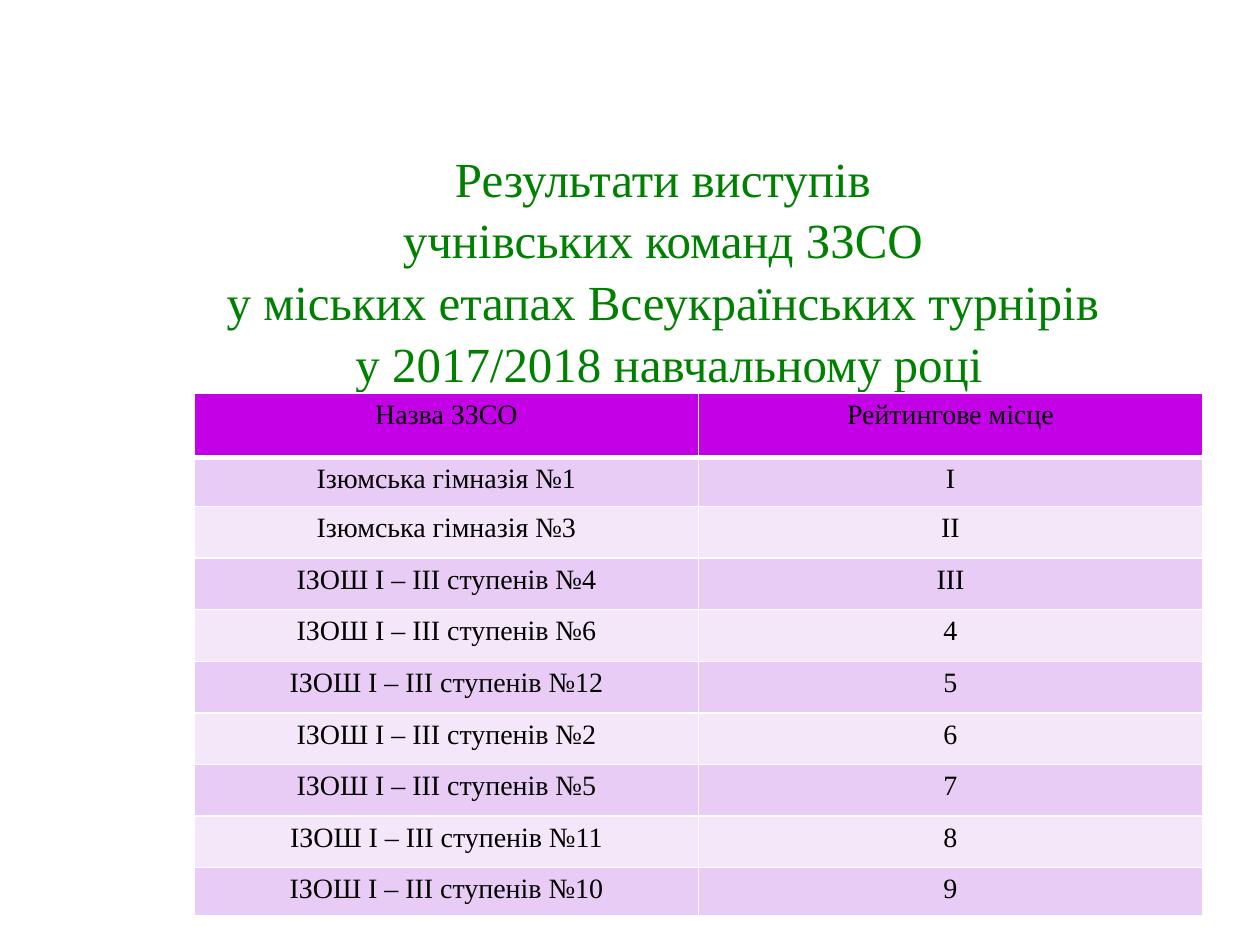
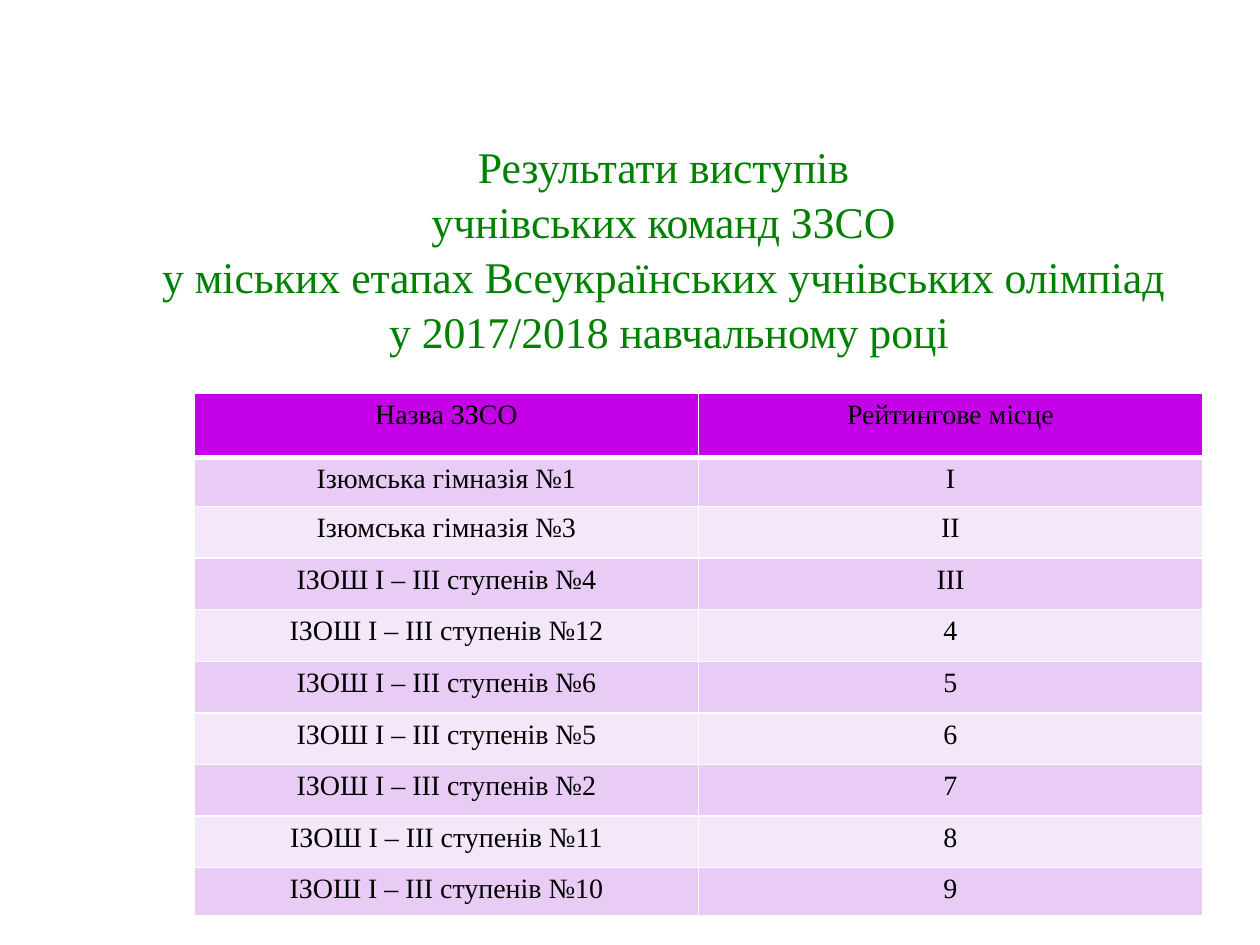
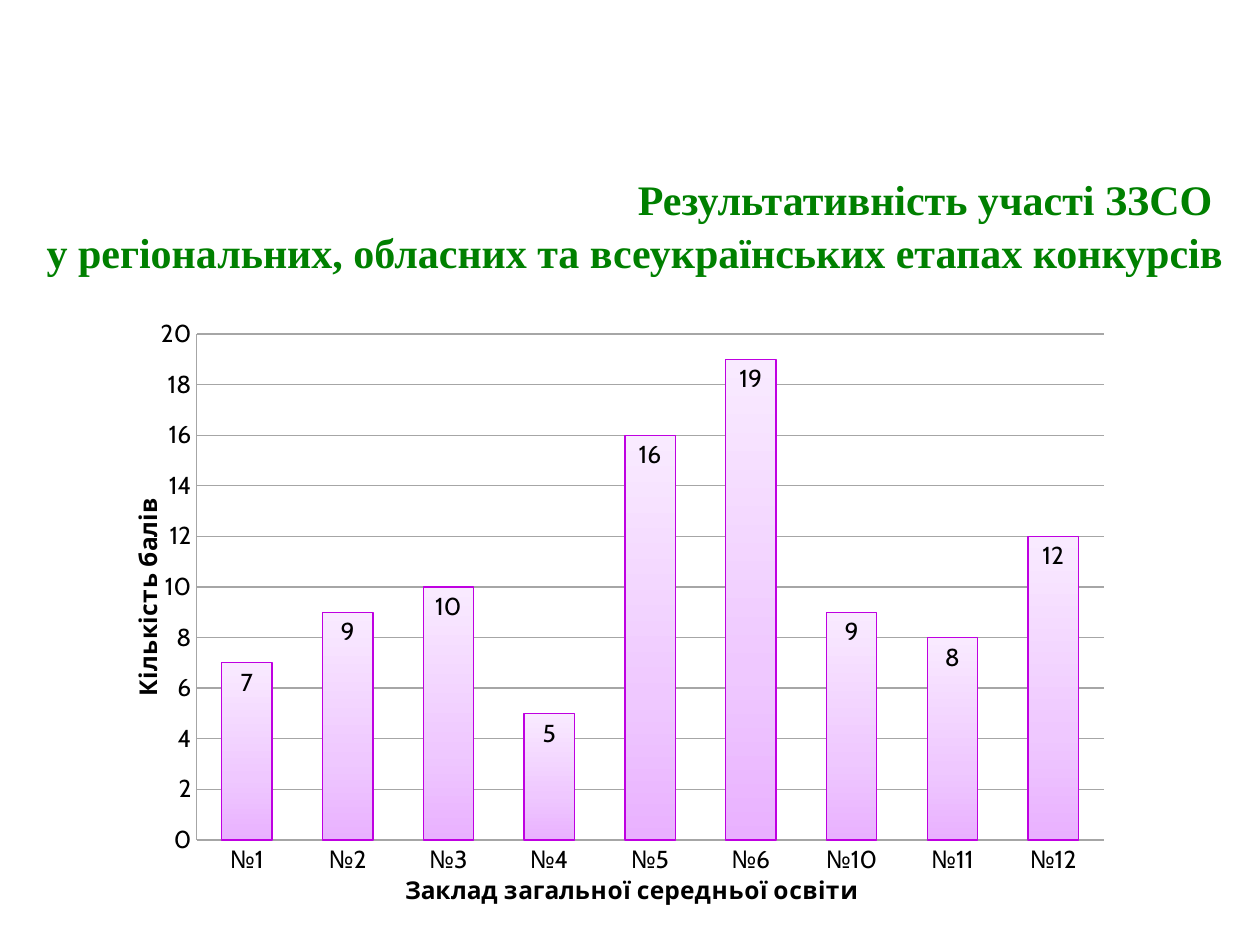
"""Build three slides with school results: two ranking tables and a column chart."""
from copy import deepcopy
from dataclasses import dataclass

from lxml import etree
from pptx import Presentation
from pptx.chart.data import CategoryChartData
from pptx.dml.color import RGBColor
from pptx.enum.chart import XL_CHART_TYPE, XL_LABEL_POSITION, XL_TICK_MARK
from pptx.enum.text import MSO_ANCHOR, MSO_AUTO_SIZE, PP_ALIGN
from pptx.oxml.ns import qn
from pptx.util import Cm, Pt

COLUMN = XL_CHART_TYPE.COLUMN_CLUSTERED
INSIDE_END = XL_LABEL_POSITION.INSIDE_END
NO_TICK = XL_TICK_MARK.NONE
MIDDLE = MSO_ANCHOR.MIDDLE
NO_FIT = MSO_AUTO_SIZE.NONE
CENTER, RIGHT = PP_ALIGN.CENTER, PP_ALIGN.RIGHT
TITLE_ONLY = 5


@dataclass(frozen=True)
class Theme:
    font: str = "Times New Roman"
    chart_font: str = "Cabin"
    title: str = "008000"
    text: str = "000000"
    border: str = "FFFFFF"
    header: str = "C300E6"
    bands: tuple = ("E9CCF5", "F5E7FA")
    bar_stops: tuple = ((0, "E9B1FF"), (0.35, "EFC8FF"), (1, "F9EAFF"))
    bar_line: str = "BF00E1"
    grid: str = "A6A6A6"
    cell_size: int = 16
    chart_size: int = 14
    tournament_size: int = 28
    olympiad_size: int = 25
    contest_size: int = 24
    line_spacing: float = 1.05


def rgb(code):
    return RGBColor.from_string(code)


def set_font(font, name, size, color, bold=False):
    font.name = name
    font.size = Pt(size)
    font.color.rgb = rgb(color)
    font.bold = bold


class Deck:
    def __init__(self, theme):
        self.theme = theme
        self.prs = Presentation()
        self.prs.slide_width, self.prs.slide_height = Cm(25.4), Cm(19.05)
        self.s = None

    def slide(self):
        self.s = self.prs.slides.add_slide(self.prs.slide_layouts[TITLE_ONLY])

    def title(self, lines, box, size, align=CENTER, bold=False, bottom=0.13):
        sp = self.s.shapes.title
        sp.left, sp.top, sp.width, sp.height = map(Cm, box)
        tf = sp.text_frame
        tf.text = "\v".join(lines)
        tf.word_wrap = True
        tf.auto_size = NO_FIT
        tf.vertical_anchor = MIDDLE
        tf.margin_bottom = Cm(bottom)
        p = tf.paragraphs[0]
        p.alignment = align
        p.line_spacing = self.theme.line_spacing
        for r in p.runs:
            set_font(r.font, self.theme.font, size, self.theme.title, bold)

    def borders(self, cell, top, bottom):
        tc_pr = cell._tc.get_or_add_tcPr()
        widths = {"lnL": 1, "lnR": 1, "lnT": top, "lnB": bottom}
        for i, (tag, width) in enumerate(widths.items()):
            ln = etree.Element(qn(f"a:{tag}"), w=str(Pt(width)))
            fill = etree.SubElement(ln, qn("a:solidFill"))
            etree.SubElement(fill, qn("a:srgbClr"), val=self.theme.border)
            tc_pr.insert(i, ln)

    def table(self, rows, left, top, col_width, heights):
        t = self.theme
        columns = len(rows[0])
        tbl = self.s.shapes.add_table(
            len(rows), columns, Cm(left), Cm(top),
            Cm(col_width * columns), Cm(sum(heights))).table
        for col in tbl.columns:
            col.width = Cm(col_width)
        for i, (values, height) in enumerate(zip(rows, heights)):
            tbl.rows[i].height = Cm(height)
            for j, value in enumerate(values):
                cell = tbl.cell(i, j)
                cell.fill.solid()
                cell.fill.fore_color.rgb = rgb(t.bands[(i - 1) % 2] if i else t.header)
                self.borders(cell, 3 if i == 1 else 1, 1 if i else 3)
                p = cell.text_frame.paragraphs[0]
                p.text = value
                p.alignment = CENTER
                set_font(p.runs[0].font, t.font, t.cell_size, t.text)

    def axis(self, axis, title):
        t = self.theme
        axis.major_tick_mark = axis.minor_tick_mark = NO_TICK
        axis.format.line.color.rgb = rgb(t.grid)
        tf = axis.axis_title.text_frame
        tf.text = title
        set_font(tf.paragraphs[0].runs[0].font, t.chart_font, t.chart_size, t.text, True)

    def gradient(self, series):
        fill = series.format.fill
        fill.gradient()
        fill.gradient_angle = 90
        gs_lst = next(series._element.iter(qn("a:gsLst")))
        gs_lst.insert(1, deepcopy(gs_lst[0]))
        for stop, (position, color) in zip(fill.gradient_stops, self.theme.bar_stops):
            stop.position = position
            stop.color.rgb = rgb(color)

    def plot_layout(self, chart, x, y, w, h):
        area = next(chart._chartSpace.iter(qn("c:plotArea")))
        for old in area.findall(qn("c:layout")):
            area.remove(old)
        layout = etree.Element(qn("c:layout"))
        manual = etree.SubElement(layout, qn("c:manualLayout"))
        settings = {"layoutTarget": "inner", "xMode": "edge", "yMode": "edge",
                    "x": x, "y": y, "w": w, "h": h}
        for tag, value in settings.items():
            etree.SubElement(manual, qn(f"c:{tag}"), val=str(value))
        area.insert(0, layout)

    def column_chart(self, points, box, category_title, value_title):
        t = self.theme
        data = CategoryChartData()
        data.categories = list(points)
        data.add_series("Series 1", list(points.values()))
        chart = self.s.shapes.add_chart(COLUMN, *map(Cm, box), data).chart
        chart.has_legend = chart.has_title = False
        set_font(chart.font, t.chart_font, t.chart_size, t.text)
        self.plot_layout(chart, 0.07, 0.05, 0.9, 0.83)
        self.axis(chart.category_axis, category_title)
        self.axis(chart.value_axis, value_title)
        values = chart.value_axis
        values.minimum_scale, values.maximum_scale, values.major_unit = 0, 20, 2
        values.major_gridlines.format.line.color.rgb = rgb(t.grid)
        plot = chart.plots[0]
        plot.gap_width, plot.overlap = 100, -24
        plot.vary_by_categories = False
        plot.has_data_labels = True
        labels = plot.data_labels
        labels.show_value = True
        labels.position = INSIDE_END
        set_font(labels.font, t.chart_font, t.chart_size, t.text)
        series = plot.series[0]
        self.gradient(series)
        series.format.line.color.rgb = rgb(t.bar_line)
        series.format.line.width = Pt(0.75)


def ranking(deck, event, numbers, size, height, bottom):
    lines = ["Результати виступів ", "учнівських команд ЗЗСО ",
             f"у міських етапах Всеукраїнських {event} ",
             "у 2017/2018 навчальному році"]
    schools = ["Ізюмська гімназія №1", "Ізюмська гімназія №3"]
    schools += [f"ІЗОШ І – ІІІ ступенів №{n}" for n in numbers]
    places = ["І", "ІІ", "ІІІ", "4", "5", "6", "7", "8", "9"]
    rows = [("Назва ЗЗСО", "Рейтингове місце"), *zip(schools, places)]
    deck.slide()
    deck.title(lines, (2.69, 3.12, 21.59, height), size, bottom=bottom)
    deck.table(rows, 3.92, 7.92, 10.16, [1.3, 0.99] + [1.04] * 7 + [0.97])


def main():
    theme = Theme()
    deck = Deck(theme)
    ranking(deck, "турнірів", (4, 6, 12, 2, 5, 11, 10),
            theme.tournament_size, 5.79, 1.32)
    ranking(deck, "учнівських олімпіад", (4, 12, 6, 5, 2, 11, 10),
            theme.olympiad_size, 4.8, 1.19)
    deck.slide()
    deck.title(["Результативність участі ЗЗСО ",
                "у регіональних, обласних та всеукраїнських етапах конкурсів"],
               (0.3, 2.92, 24.61, 3.2), theme.contest_size, RIGHT, True)
    scores = {"№1": 7, "№2": 9, "№3": 10, "№4": 5, "№5": 16,
              "№6": 19, "№10": 9, "№11": 8, "№12": 12}
    deck.column_chart(scores, (2.54, 6.12, 20.32, 12.29),
                      "Заклад загальної середньої освіти", "Кількість балів")
    deck.prs.save("out.pptx")


if __name__ == "__main__":
    main()
